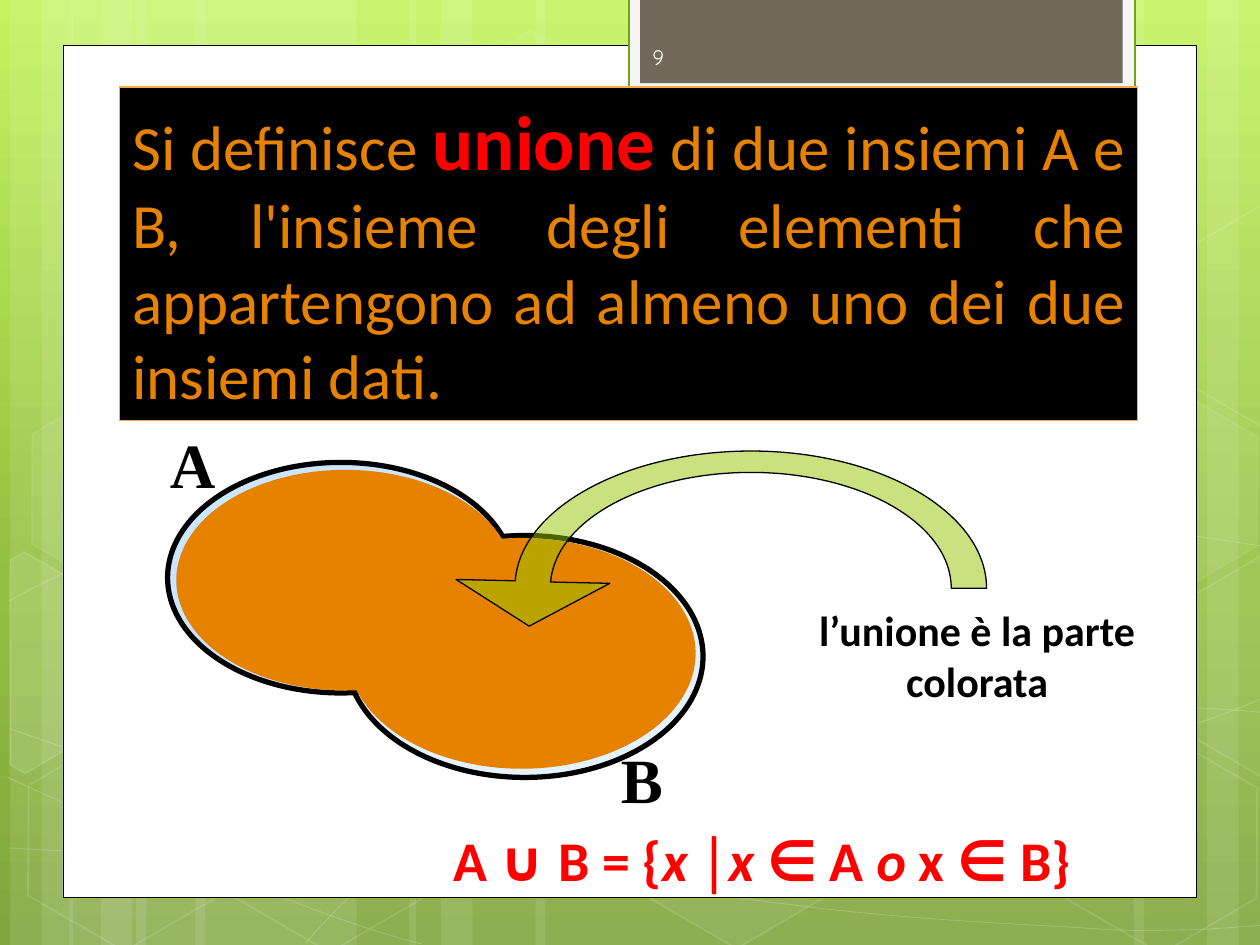
import math
from copy import deepcopy
from dataclasses import dataclass
from typing import NamedTuple, Optional

from lxml import etree
from pptx import Presentation
from pptx import util as u
from pptx.dml.color import RGBColor
from pptx.enum import shapes, text
from pptx.oxml.ns import qn

# Grid: ten columns across, seven and a half rows down
COLUMNS, ROWS = 10, 7.5
WIDTH, HEIGHT = u.Inches(10), u.Inches(7.5)
KIND = shapes.MSO_SHAPE
ALIGN = text.PP_ALIGN
WHITE, BLACK, RED, ORANGE, PALE_BLUE = "FFFFFF", "000000", "FF0000", "E68200", "CDE6FF"
TILT = 30


class Area(NamedTuple):
    column: float
    row: float
    columns: float
    rows: float


class Ink(NamedTuple):
    color: str
    opacity: int = 100
    width: float = 1


@dataclass
class Span:
    words: str
    size: float
    color: str
    font: str = "Calibri"
    bold: bool = True
    italic: bool = False


def rgb(color: str) -> RGBColor:
    return RGBColor.from_string(color)


def across(columns: float) -> int:
    return round(WIDTH * columns / COLUMNS)


def down(rows: float) -> int:
    return round(HEIGHT * rows / ROWS)


def place(area: Area) -> tuple:
    return across(area.column), down(area.row), across(area.columns), down(area.rows)


def apply_ink(fill, holder, ink: Ink) -> None:
    fill.solid()
    fill.fore_color.rgb = rgb(ink.color)
    if ink.opacity < 100:
        color = holder.find(qn("a:solidFill")).find(qn("a:srgbClr"))
        etree.SubElement(color, qn("a:alpha"), val=str(ink.opacity * 1000))


def paint(shape, fill: Optional[Ink], line: Optional[Ink]) -> None:
    shape.shadow.inherit = False
    properties = shape.element.spPr
    if fill:
        apply_ink(shape.fill, properties, fill)
    else:
        shape.fill.background()
    if line:
        shape.line.width = u.Pt(line.width)
        apply_ink(shape.line.fill, properties.find(qn("a:ln")), line)
    else:
        shape.line.fill.background()


def draw_shape(page, kind, area: Area, fill: Optional[Ink] = None,
               line: Optional[Ink] = None, rotation: float = 0):
    shape = page.shapes.add_shape(kind, *place(area))
    paint(shape, fill, line)
    shape.rotation = rotation
    return shape


def lines(*points) -> list:
    return [("lnTo", [point]) for point in points]


def curves(*points) -> list:
    """Group points in threes: two handles and an end."""
    return [("cubicBezTo", points[i:i + 3]) for i in range(0, len(points), 3)]


def draw_outline(page, area: Area, start: tuple, pieces: list, fill: Optional[Ink],
                 line: Ink, close: bool = True, rotation: float = 0) -> None:
    """Draw a path inside a frame; a turned frame keeps the path upright on the page."""
    left, top, width, height = place(area)
    builder = page.shapes.build_freeform(left, top, scale=1.0)
    builder.add_line_segments([(left + width, top), (left + width, top + height), (left, top + height)])
    shape = builder.convert_to_shape()
    path = shape.element.find(".//" + qn("a:pathLst"))[0]
    for child in list(path):
        path.remove(child)
    cos, sin = math.cos(math.radians(rotation)), math.sin(math.radians(rotation))
    for command, points in [("moveTo", [start])] + pieces:
        step = etree.SubElement(path, qn("a:" + command))
        for column, row in points:
            x, y = across(column) - left - width / 2, down(row) - top - height / 2
            etree.SubElement(step, qn("a:pt"), x=str(round(x * cos + y * sin + width / 2)),
                             y=str(round(y * cos - x * sin + height / 2)))
    if close:
        etree.SubElement(path, qn("a:close"))
    paint(shape, fill, line)
    shape.rotation = rotation


def write(box, spans: list, align=ALIGN.LEFT, anchor=text.MSO_ANCHOR.TOP) -> None:
    frame = box.text_frame
    frame.word_wrap = True
    frame.vertical_anchor = anchor
    para = frame.paragraphs[0]
    para.alignment = align
    for span in spans:
        run = para.add_run()
        run.text = span.words
        font = run.font
        font.name, font.size = span.font, u.Pt(span.size)
        font.bold, font.italic = span.bold, span.italic
        font.color.rgb = rgb(span.color)


def draw_text(page, area: Area, spans: list, **layout) -> None:
    write(page.shapes.add_textbox(*place(area)), spans, **layout)


# Left edge and width of the background bands; the third group is turned round
BANDS = [(1.08, 1.75), (0.08, 0.5), (0.33, 0.83), (1.55, 1.75), (0.55, 0.5), (0.8, 0.83),
         (7.33, 1.75), (9.58, 0.5), (9, 0.83), (4.25, 3.08), (3.25, 0.5), (3.5, 0.83)]
TURNED_BANDS = BANDS[6:9]

# Frame, start and pieces of each wave
WAVES = [
    (Area(0.07, 5.51, 10, 1.29), (0.07, 6.73), curves(
        (0.61, 6.76), (1.15, 6.79), (1.9, 6.78), (2.65, 6.77), (3.58, 6.75), (4.58, 6.65),
        (5.58, 6.55), (7, 6.36), (7.92, 6.17), (8.83, 5.98), (9.77, 5.68), (10.07, 5.51))),
    (Area(0.07, 3.79, 10, 0.97), (0.07, 4.77), curves(
        (0.36, 4.61), (0.65, 4.46), (1.21, 4.31), (1.78, 4.16), (2.59, 3.94), (3.47, 3.87),
        (4.36, 3.8), (5.44, 3.79), (6.54, 3.87), (7.64, 3.95), (9.47, 4.26), (10.07, 4.34))),
    (Area(0.06, 6.17, 3.29, 1.32), (0.06, 6.17), curves((1.27, 6.72), (2.47, 7.27), (3.34, 7.49))),
    (Area(0.07, 5.78, 10, 1.62), (0.07, 5.78), curves(
        (0.38, 5.89), (0.7, 6), (1.28, 6.16), (1.86, 6.31), (2.73, 6.56), (3.57, 6.73),
        (4.4, 6.9), (5.45, 7.08), (6.28, 7.18), (7.11, 7.29), (8, 7.33), (8.53, 7.36),
        (9.05, 7.4), (9.19, 7.38), (9.45, 7.38), (9.71, 7.37), (9.89, 7.35), (10.07, 7.34))),
    (Area(2.42, 5.61, 7.64, 1.88), (2.42, 7.49), curves(
        (2.6, 7.29), (2.78, 7.09), (3.02, 6.91), (3.26, 6.73), (3.6, 6.53), (3.88, 6.39),
        (4.16, 6.25), (4.33, 6.19), (4.7, 6.09), (5.06, 5.99), (5.73, 5.85), (6.08, 5.78),
        (6.44, 5.71), (6.49, 5.71), (6.8, 5.69), (7.11, 5.66), (7.6, 5.63), (7.94, 5.62),
        (8.29, 5.61), (8.86, 5.62), (8.86, 5.62)) + lines((9.53, 5.62)) + curves(
        (9.71, 5.63), (9.88, 5.64), (9.97, 5.65), (10.06, 5.66), (10.03, 5.65), (10.06, 5.66))),
]

# Column, row, fill opacity and line opacity of whole hexagons, around the first cut one
LEFT_HEXAGONS = [(3.34, 0.36, 4, 8), (4.97, 5.89, 6, 12)]
RIGHT_HEXAGONS = [(0.11, 5.91, 0, 12), (0.14, 3.12, 7, 8), (1.74, 5.92, 0, 12),
                  (7.53, 4.53, 10, 12), (8.34, 5.93, 0, 12), (8.34, 3.14, 7, 8)]

# Hexagons cut by the slide edge: frame, corners and fill opacity
CUT_HEXAGONS = [
    (Area(-0.33, 4.59, 1.38, 1.52),
     [(0.08, 4.45), (0.19, 4.38), (0.96, 4.82), (0.95, 5.7), (0.2, 6.14), (0.08, 6.07)], 10),
    (Area(9.17, 4.44, 1.36, 1.52),
     [(9.26, 4.85), (10.01, 4.41), (10.09, 4.46), (10.09, 6.13), (10.02, 6.17), (9.26, 5.73)], 4),
    (Area(9.17, 1.65, 1.36, 1.52),
     [(9.26, 2.07), (10.01, 1.63), (10.1, 1.68), (10.09, 3.35), (10.02, 3.39), (9.26, 2.95)], 0),
]


def haze(opacity: int) -> Optional[Ink]:
    return Ink(WHITE, opacity) if opacity else None


def draw_hexagons(page, hexagons: list) -> None:
    for column, row, opacity, edge in hexagons:
        hexagon = draw_shape(page, KIND.HEXAGON, Area(column, row, 1.75, 1.52),
                             haze(opacity), haze(edge), TILT)
        hexagon.adjustments[0], hexagon.adjustments[1] = 0.285, 1.155


def draw_cut_hexagons(page, hexagons: list) -> None:
    for area, corners, opacity in hexagons:
        draw_outline(page, area, corners[0], lines(*corners[1:], corners[0]),
                     haze(opacity), haze(12), rotation=TILT)


def draw_background(page) -> None:
    fill = page.background.fill
    fill.gradient()
    fill.gradient_angle = 270
    stops = page.element.find(".//" + qn("a:gsLst"))
    stops.append(deepcopy(stops[-1]))
    for stop, (position, color) in zip(page.background.fill.gradient_stops,
                                       [(0, "C3F35F"), (0.62, "93BF3F"), (1, "81A53E")]):
        stop.position = position
        stop.color.rgb = rgb(color)
    for band in BANDS:
        draw_shape(page, KIND.RECTANGLE, Area(band[0], 0, band[1], ROWS), haze(10),
                   rotation=180 if band in TURNED_BANDS else 0)
    for area, start, pieces in WAVES:
        draw_outline(page, area, start, pieces, None, Ink(WHITE, 20, 0.5), close=False)
    draw_hexagons(page, LEFT_HEXAGONS)
    draw_cut_hexagons(page, CUT_HEXAGONS[:1])
    draw_hexagons(page, RIGHT_HEXAGONS)
    draw_cut_hexagons(page, CUT_HEXAGONS[1:])


def draw_frame(page) -> None:
    for area, fill, line in [
            (Area(0.5, 0.36, 9, 6.76), WHITE, Ink(BLACK, width=0.5)),
            (Area(4.99, -0.02, 4.02, 0.76), "F5F5F5", Ink("74A510", width=1.25)),
            (Area(5.08, -0.02, 3.83, 0.68), "71685A", None)]:
        draw_shape(page, KIND.RECTANGLE, area, Ink(fill), line)
    draw_text(page, Area(5.08, 0.25, 1.46, 0.4), [Span("9", 12, "FEFEFE", "Quicksand", False)],
              anchor=text.MSO_ANCHOR.MIDDLE)


def draw_union(page) -> None:
    # Outlined sets, their names, then the coloured union
    for area, opacity in [(Area(1.33, 3.67, 2.75, 1.83), 100), (Area(2.75, 4.25, 2.83, 1.92), 50)]:
        draw_shape(page, KIND.OVAL, area, Ink(PALE_BLUE, opacity), Ink(BLACK, width=3))
    for name, area in [("A", Area(1.25, 3.33, 0.33, 0.7)), ("B", Area(4.83, 5.83, 0.58, 0.7))]:
        draw_text(page, area, [Span(name, 36, BLACK, "Times New Roman")])
    for area in [Area(1.42, 3.75, 2.64, 1.71), Area(2.78, 4.29, 2.72, 1.79)]:
        draw_shape(page, KIND.OVAL, area, Ink(ORANGE), Ink(ORANGE, width=3))


def draw_arrow(page) -> None:
    start = (4.37, 4.62)
    inner = curves((4.41, 4.13), (5.11, 3.75), (5.96, 3.75), (6.84, 3.75), (7.55, 4.16), (7.55, 4.67))
    outer = curves((7.83, 4.07), (6.99, 3.58), (5.96, 3.58), (4.96, 3.58), (4.13, 4.04), (4.09, 4.61))
    head = lines((3.62, 4.6), (4.2, 4.97), (4.84, 4.63), start)
    draw_outline(page, Area(4.08, 3.58, 3.75, 2.17), start, inner + lines((7.83, 4.67)) + outer + head,
                 Ink("94C600", 50), Ink(BLACK, width=0.75))


def main() -> None:
    deck = Presentation()
    deck.slide_width, deck.slide_height = WIDTH, HEIGHT
    page = deck.slides.add_slide(deck.slide_layouts[6])
    draw_background(page)
    draw_frame(page)
    # Definition and caption
    definition = draw_shape(page, KIND.RECTANGLE, Area(0.95, 0.69, 8.08, 2.65),
                            Ink(BLACK), Ink("FFA94A", width=0.75))
    write(definition, [
        Span("Si definisce ", 36, ORANGE, bold=False), Span("unione", 44, RED),
        Span(" di due insiemi A e B, l'insieme degli elementi che appartengono "
             "ad almeno uno dei due insiemi dati.", 36, ORANGE, bold=False)], align=ALIGN.JUSTIFY)
    draw_text(page, Area(6.17, 4.75, 3.17, 0.91),
              [Span("l’unione è la parte colorata", 24, BLACK)], align=ALIGN.CENTER)
    draw_union(page)
    # Set formula, with its variables in italics
    formula = ["A ∪ B = {", "x ", "│", "x ", "∈ A ", "o", " x ∈ B}"]
    draw_text(page, Area(3.5, 6.5, 5.5, 0.63),
              [Span(words, 32, RED, italic=index % 2 == 1) for index, words in enumerate(formula)])
    draw_arrow(page)
    deck.save("out.pptx")


if __name__ == "__main__":
    main()
